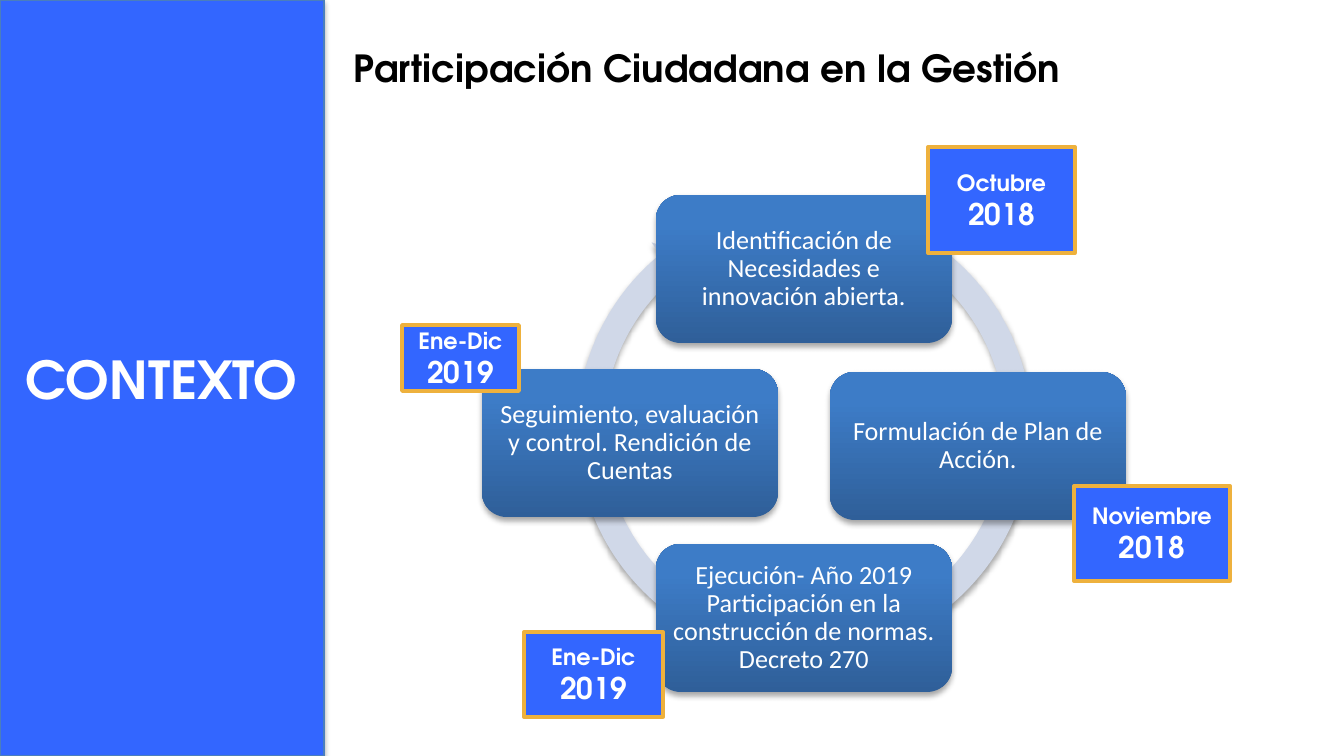
from lxml.etree import SubElement
from pptx import Presentation
from pptx.dml.color import RGBColor
from pptx.enum.shapes import MSO_SHAPE
from pptx.enum.text import MSO_ANCHOR, PP_ALIGN
from pptx.oxml.ns import qn
from pptx.util import Emu, Pt

TITLE = "Participación Ciudadana en la Gestión"
SECTION = "CONTEXTO"
STAGES = [
    ("Identificación de Necesidades e innovación abierta.", 656, 195),
    ("Formulación de Plan de Acción.", 830, 372),
    ("Ejecución- Año 2019 Participación en la construcción de normas. Decreto 270", 656, 544),
    ("Seguimiento, evaluación y control. Rendición de Cuentas", 482, 369),
]
DATES = [
    ("Octubre", "2018", (928, 147, 147, 106)),
    ("Noviembre", "2018", (1074, 486, 156, 95)),
    ("Ene-Dic", "2019", (524, 632, 139, 85)),
    ("Ene-Dic", "2019", (402, 325, 117, 66)),
]
COLORS = {
    "panel": "3366FF", "panel_line": "4B7EBC", "date_line": "EEB13D",
    "ring": "D0D8E8", "stage_dark": "2F5F99", "stage_light": "3D7CC7",
    "white": "FFFFFF", "black": "000000",
}
HEADING_FONT = "TeX Gyre Adventor"
BODY_FONT = "Calibri"
STAGE_SIZE = (296, 148)
RING_ADJUSTMENTS = (0.055, 3.307, 138.152, 173.621, 0.058)


def px(value):
    return Emu(round(value * 914400 / 134.4))


def color(name):
    return RGBColor.from_string(COLORS[name])


def add_shadow(shape):
    effects = shape._element.spPr.find(qn("a:effectLst"))
    outer = SubElement(effects, qn("a:outerShdw"), blurRad="40000", dist="23000",
                       dir="5400000", rotWithShape="0")
    tint = SubElement(outer, qn("a:srgbClr"), val=COLORS["black"])
    SubElement(tint, qn("a:alpha"), val="35000")


def add_box(slide, kind, box, fill=None, line=None, line_width=1, shadow=False):
    shape = slide.shapes.add_shape(kind, *map(px, box))
    shape.shadow.inherit = False
    if fill:
        shape.fill.solid()
        shape.fill.fore_color.rgb = color(fill)
    if line:
        shape.line.color.rgb = color(line)
        shape.line.width = Pt(line_width)
    else:
        shape.line.fill.background()
    if shadow:
        add_shadow(shape)
    return shape


def write(shape, lines, font=HEADING_FONT, ink="white", bold=True,
          align=PP_ALIGN.CENTER, anchor=MSO_ANCHOR.MIDDLE, inset=(13, 7), spacing=1.0):
    frame = shape.text_frame
    frame.word_wrap = True
    frame.vertical_anchor = anchor
    frame.margin_left = frame.margin_right = px(inset[0])
    frame.margin_top = frame.margin_bottom = px(inset[1])
    for index, (text, size) in enumerate(lines):
        paragraph = frame.add_paragraph() if index else frame.paragraphs[0]
        paragraph.alignment = align
        paragraph.line_spacing = spacing
        paragraph.space_before = Pt(0)
        run = paragraph.add_run()
        run.text = text
        run.font.name = font
        run.font.size = Pt(size)
        run.font.bold = bold
        run.font.color.rgb = color(ink)


def add_stage(slide, text, left, top):
    shape = add_box(slide, MSO_SHAPE.ROUNDED_RECTANGLE, (left, top, *STAGE_SIZE), shadow=True)
    shape.fill.gradient()
    shape.fill.gradient_angle = 90
    stops = [(0, "stage_dark"), (0.8, "stage_light")]
    for stop, (position, name) in zip(shape.fill.gradient_stops, stops):
        stop.position = position
        stop.color.rgb = color(name)
    write(shape, [(text, 14)], font=BODY_FONT, bold=False, inset=(9, 9), spacing=0.9)


def main():
    presentation = Presentation()
    presentation.slide_width, presentation.slide_height = px(1344), px(756)
    slide = presentation.slides.add_slide(presentation.slide_layouts[5])

    ring = add_box(slide, MSO_SHAPE.CIRCULAR_ARROW, (562, 188, 485, 485), "ring", shadow=True)
    for index, value in enumerate(RING_ADJUSTMENTS):
        ring.adjustments[index] = value
    for stage in STAGES:
        add_stage(slide, *stage)
    for month, year, box in DATES:
        date = add_box(slide, MSO_SHAPE.RECTANGLE, box, "panel", "date_line", 2)
        write(date, [(month, 12), (year, 16)])

    add_box(slide, MSO_SHAPE.RECTANGLE, (0, 0, 324, 756), "panel", "panel_line", 0.75, True)
    section = slide.shapes.add_textbox(*map(px, (12, 340, 321, 77)))
    write(section, [(SECTION, 28)], align=PP_ALIGN.LEFT, anchor=MSO_ANCHOR.TOP)

    title = slide.shapes.title
    title.left, title.top, title.width, title.height = map(px, (341, 38, 734, 59))
    write(title, [(TITLE, 20)], ink="black", align=PP_ALIGN.LEFT, anchor=MSO_ANCHOR.TOP)

    presentation.save("out.pptx")


if __name__ == "__main__":
    main()
